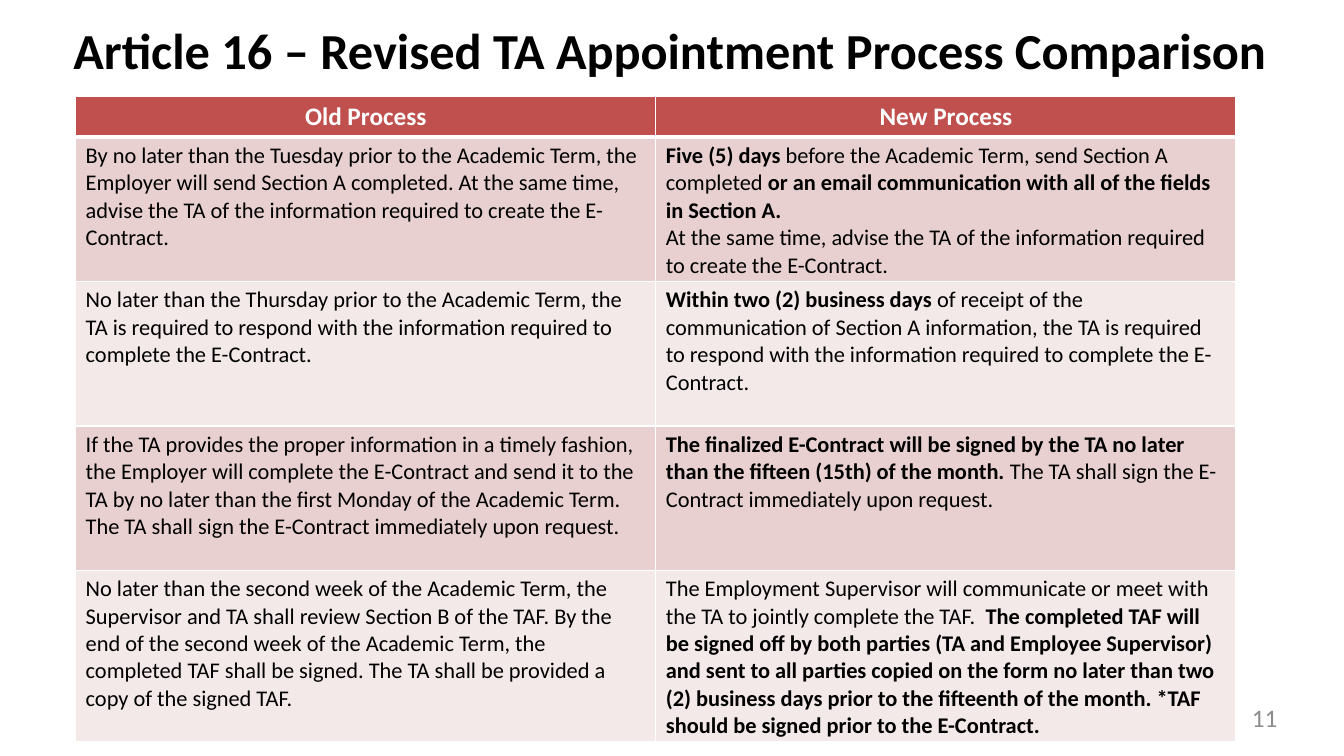
from dataclasses import dataclass

from lxml.etree import SubElement
from pptx import Presentation
from pptx.dml.color import RGBColor
from pptx.enum.text import MSO_ANCHOR, MSO_AUTO_SIZE, PP_ALIGN
from pptx.oxml.ns import qn
from pptx.util import Emu, Inches, Pt

SLIDE_WIDTH = Inches(13.33)
SLIDE_HEIGHT = Inches(7.5)
FONT = "Calibri"
WHITE, BLACK, GREY = "FFFFFF", "000000", "8C8C8C"
HEADER_FILL = "C0504D"
BAND_FILLS = ("E8D0D0", "F4E9E9")
HEADER_SHARE = 5.3
STEP_SHARES = (19.1, 19.1, 19.1, 22.7)


@dataclass(frozen=True)
class Area:
    """A rectangle in percent of the slide's width and height."""
    left: float
    top: float
    width: float
    height: float

    def box(self) -> tuple[Emu, Emu, Emu, Emu]:
        """Return left, top, width and height as lengths."""
        return across(self.left), down(self.top), across(self.width), down(self.height)


@dataclass(frozen=True)
class Phrase:
    """A stretch of text, bold where the process changed."""
    text: str
    bold: bool = False


@dataclass(frozen=True)
class Step:
    """One step of the process, before and after the revision."""
    old: str
    new: tuple[tuple[Phrase, ...], ...]


TITLE_AREA = Area(-1.28, 1.87, 103.15, 9.47)
TABLE_AREA = Area(5.63, 12.8, 86.34, 85.3)
NUMBER_AREA = Area(72.02, 92.93, 23.03, 5.07)

STEPS = (
    Step(
        "By no later than the Tuesday prior to the Academic Term, the Employer will send "
        "Section A completed. At the same time, advise the TA of the information required "
        "to create the E-Contract.",
        (
            (
                Phrase("Five (5) days ", True),
                Phrase("before the Academic Term, send Section A completed "),
                Phrase("or an email communication with all of the fields in Section A.", True),
            ),
            (
                Phrase("At the same time, advise the TA of the information required "
                       "to create the E-Contract."),
            ),
        ),
    ),
    Step(
        "No later than the Thursday prior to the Academic Term, the TA is required to "
        "respond with the information required to complete the E-Contract.",
        ((
            Phrase("Within two (2) business days ", True),
            Phrase("of receipt of the communication of Section A information, the TA is "
                   "required to respond with the information required to complete the "
                   "E-Contract."),
        ),),
    ),
    Step(
        "If the TA provides the proper information in a timely fashion, the Employer will "
        "complete the E-Contract and send it to the TA by no later than the first Monday of "
        "the Academic Term. The TA shall sign the E-Contract immediately upon request.",
        ((
            Phrase("The finalized E-Contract will be signed by the TA no later than the "
                   "fifteen (15th) of the month. ", True),
            Phrase("The TA shall sign the E-Contract immediately upon request."),
        ),),
    ),
    Step(
        "No later than the second week of the Academic Term, the Supervisor and TA shall "
        "review Section B of the TAF. By the end of the second week of the Academic Term, "
        "the completed TAF shall be signed. The TA shall be provided a copy of the signed TAF.",
        ((
            Phrase("The Employment Supervisor will communicate or meet with the TA to jointly "
                   "complete the TAF.  "),
            Phrase("The completed TAF will be signed off by both parties (TA and Employee "
                   "Supervisor) and sent to all parties copied on the form no later than two "
                   "(2) business days prior to the fifteenth of the month. *TAF should be "
                   "signed prior to the E-Contract.", True),
        ),),
    ),
)


def across(share: float) -> Emu:
    """Turn a percentage of the slide's width into a length."""
    return Emu(round(SLIDE_WIDTH * share / 100))


def down(share: float) -> Emu:
    """Turn a percentage of the slide's height into a length."""
    return Emu(round(SLIDE_HEIGHT * share / 100))


def color(value: str) -> RGBColor:
    """Turn a hex string into a colour."""
    return RGBColor.from_string(value)


def style(paragraph, size: float, ink: str, bold: bool = False,
          align: PP_ALIGN = PP_ALIGN.LEFT) -> None:
    """Set a paragraph's font and alignment."""
    paragraph.alignment = align
    font = paragraph.font
    font.name, font.size, font.bold = FONT, Pt(size), bold
    font.color.rgb = color(ink)


def paint_cell(cell, fill: str, top: float = 1, bottom: float = 1) -> None:
    """Give a cell white borders and a solid fill."""
    properties = cell._tc.get_or_add_tcPr()
    for side, width in (("L", 1), ("R", 1), ("T", top), ("B", bottom)):
        border = SubElement(properties, qn(f"a:ln{side}"), w=str(Pt(width)))
        SubElement(SubElement(border, qn("a:solidFill")), qn("a:srgbClr"), val=WHITE)
    cell.fill.solid()
    cell.fill.fore_color.rgb = color(fill)


def write_cell(cell, paragraphs: tuple[tuple[Phrase, ...], ...]) -> None:
    """Write paragraphs of plain and bold phrases into a cell."""
    frame = cell.text_frame
    for index, phrases in enumerate(paragraphs):
        paragraph = frame.add_paragraph() if index else frame.paragraphs[0]
        for phrase in phrases:
            run = paragraph.add_run()
            run.text = phrase.text
            if phrase.bold:
                run.font.bold = True
        style(paragraph, 16, BLACK)


def add_title(slide) -> None:
    """Fill and place the slide's title."""
    title = slide.shapes.title
    title.left, title.top, title.width, title.height = TITLE_AREA.box()
    frame = title.text_frame
    frame.text = "Article 16 – Revised TA Appointment Process Comparison "
    frame.word_wrap = True
    frame.auto_size = MSO_AUTO_SIZE.SHAPE_TO_FIT_TEXT
    frame.vertical_anchor = MSO_ANCHOR.TOP
    style(frame.paragraphs[0], 36, BLACK, True, PP_ALIGN.CENTER)


def add_page_number(slide) -> None:
    """Add the page number at the lower right."""
    frame = slide.shapes.add_textbox(*NUMBER_AREA.box()).text_frame
    frame.margin_left = frame.margin_top = frame.margin_right = frame.margin_bottom = 0
    frame.word_wrap = True
    frame.text = "11"
    style(frame.paragraphs[0], 18, GREY, align=PP_ALIGN.RIGHT)


def add_comparison(slide) -> None:
    """Add the table that sets the old process beside the new one."""
    comparison = slide.shapes.add_table(len(STEPS) + 1, 2, *TABLE_AREA.box()).table
    for row, share in zip(comparison.rows, (HEADER_SHARE, *STEP_SHARES)):
        row.height = down(share)
    for column, heading in enumerate(("Old Process", "New Process")):
        cell = comparison.cell(0, column)
        cell.text = heading
        style(cell.text_frame.paragraphs[0], 18, WHITE, True, PP_ALIGN.CENTER)
        paint_cell(cell, HEADER_FILL, bottom=3)
    for index, step in enumerate(STEPS):
        for column, content in enumerate((((Phrase(step.old),),), step.new)):
            cell = comparison.cell(index + 1, column)
            write_cell(cell, content)
            paint_cell(cell, BAND_FILLS[index % 2], top=1 if index else 3)


def main() -> None:
    """Build and save the slide."""
    deck = Presentation()
    deck.slide_width, deck.slide_height = SLIDE_WIDTH, SLIDE_HEIGHT
    slide = deck.slides.add_slide(deck.slide_layouts[5])
    add_page_number(slide)
    add_title(slide)
    add_comparison(slide)
    deck.save("out.pptx")


if __name__ == "__main__":
    main()
